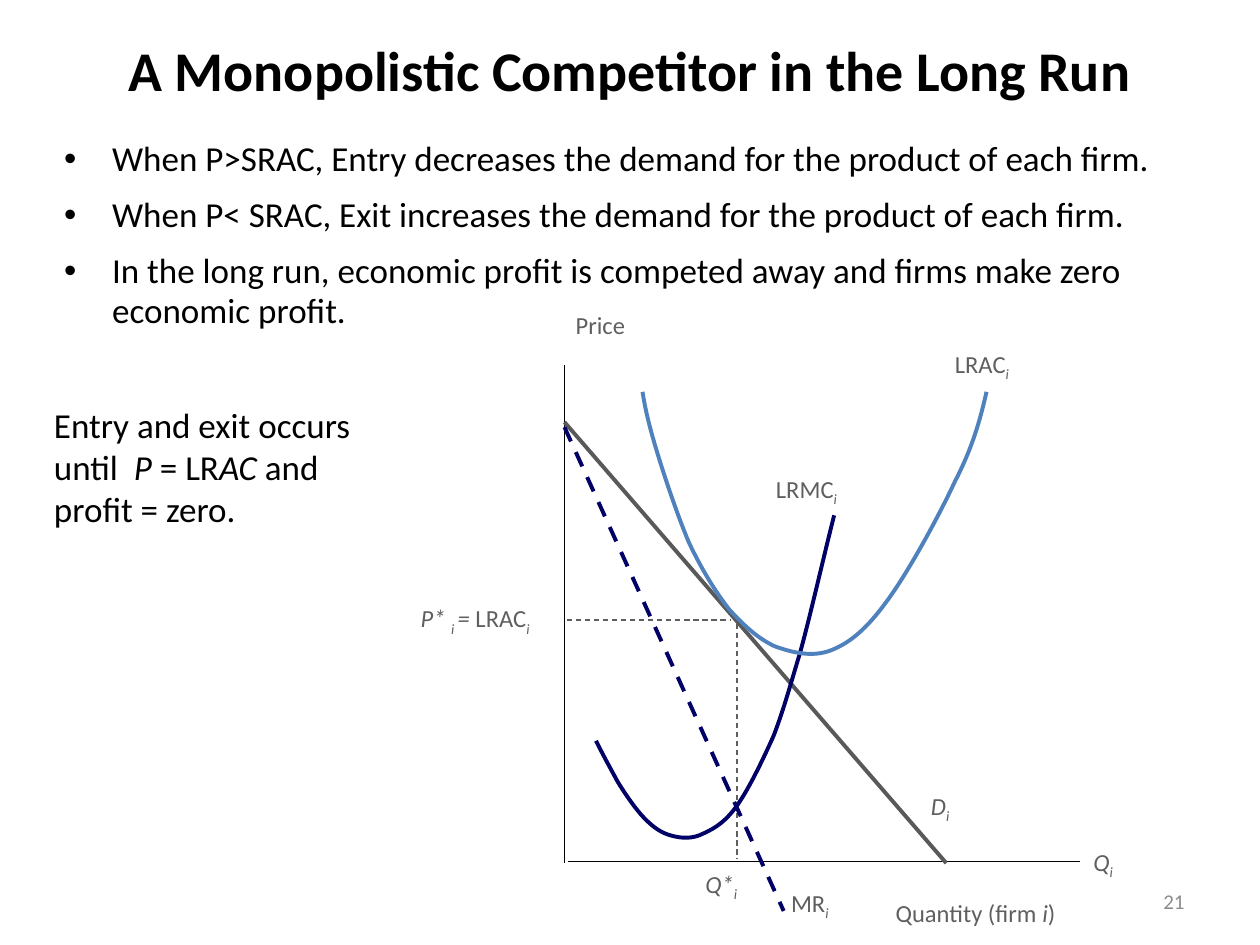
from lxml import etree
from pptx import Presentation
from pptx.dml.color import RGBColor
from pptx.enum.dml import MSO_LINE
from pptx.enum.shapes import MSO_CONNECTOR
from pptx.enum.text import MSO_ANCHOR, MSO_AUTO_SIZE, PP_ALIGN
from pptx.oxml.ns import qn
from pptx.util import Pt

STRAIGHT = MSO_CONNECTOR.STRAIGHT
DASH = MSO_LINE.DASH
LEFT, CENTER, RIGHT = PP_ALIGN.LEFT, PP_ALIGN.CENTER, PP_ALIGN.RIGHT
TOP, MIDDLE = MSO_ANCHOR.TOP, MSO_ANCHOR.MIDDLE
NO_FIT = MSO_AUTO_SIZE.NONE

EMU_PER_PX = 9144  # 100 px to the inch
FONT = "Calibri"
COLORS = {
    "text": "000000",
    "label": "5F5F5F",
    "number": "8C8C8C",
    "axis": "000000",
    "demand": "595959",
    "marginal": "000066",
    "average": "4F81BD",
}
THIN, THICK = 0.75, 2.25
SUB = ("i", "is")  # italic subscript i


def px(value):
    return value * EMU_PER_PX


def color(name):
    return RGBColor.from_string(COLORS[name])


class SlideWriter:
    def __init__(self, page):
        self.page = page

    def place(self, shape, left, top, width, height):
        shape.left, shape.top = px(left), px(top)
        shape.width, shape.height = px(width), px(height)

    def font(self, paragraph, size, tint, bold=None):
        paragraph.font.name = FONT
        paragraph.font.size = Pt(size)
        paragraph.font.bold = bold
        paragraph.font.color.rgb = color(tint)

    def stroke(self, shape, tint, width, dash):
        shape.line.color.rgb = color(tint)
        shape.line.width = Pt(width)
        if dash:
            shape.line.dash_style = dash

    def title(self, text, *area):
        box = self.page.shapes.title
        self.place(box, *area)
        box.text_frame.text = text
        box.text_frame.vertical_anchor = MIDDLE
        para = box.text_frame.paragraphs[0]
        para.alignment = CENTER
        self.font(para, 32, "text", bold=True)

    def bullets(self, items, *area):
        box = self.page.placeholders[1]
        self.place(box, *area)
        frame = box.text_frame
        frame.auto_size = NO_FIT
        frame.text = "\n".join(items)
        for para in frame.paragraphs:
            self.font(para, 20, "text")
            para.line_spacing = 0.95
            para.space_before, para.space_after = Pt(3), Pt(6)
            properties = para._p.get_or_add_pPr()
            properties.set("marL", str(px(38)))
            properties.set("indent", str(px(-38)))

    def text(self, lines, *area, size=14, tint="label", align=LEFT, anchor=TOP):
        """Each line is a list of (text, style): i is italic, s is subscript."""
        box = self.page.shapes.add_textbox(*map(px, area))
        frame = box.text_frame
        frame.word_wrap = True
        frame.vertical_anchor = anchor
        para = frame.paragraphs[0]
        para.alignment = align
        self.font(para, size, tint)
        for number, spans in enumerate(lines):
            if number:
                para.add_line_break()
            for words, style in spans:
                span = para.add_run()
                span.text = words
                if "i" in style:
                    span.font.italic = True
                if "s" in style:
                    span._r.get_or_add_rPr().set("baseline", "-25000")

    def line(self, start, end, tint, width=THIN, dash=None):
        line = self.page.shapes.add_connector(STRAIGHT, *map(px, start + end))
        self.stroke(line, tint, width, dash)
        etree.SubElement(line._element.spPr, qn("a:effectLst"))

    def curve(self, points, tint, width=THICK):
        """Start point, then three points for each Bezier segment."""
        start, *rest = [(px(x), px(y)) for x, y in points]
        builder = self.page.shapes.build_freeform(*start)
        builder.add_line_segments(rest, close=False)
        curve = builder.convert_to_shape()
        curve.shadow.inherit = False
        curve.fill.background()
        self.stroke(curve, tint, width, None)
        outline = next(curve._element.iter(qn("a:path")))
        steps = outline.findall(qn("a:lnTo"))
        for first in range(0, len(steps), 3):
            bezier = etree.SubElement(outline, qn("a:cubicBezTo"))
            for step in steps[first:first + 3]:
                bezier.append(step[0])
                outline.remove(step)


def main():
    deck = Presentation()
    deck.slide_width, deck.slide_height = px(1000), px(750)
    page = deck.slides.add_slide(deck.slide_layouts[1])
    writer = SlideWriter(page)

    # Heading and explanation
    writer.title("A Monopolistic Competitor in the Long Run", 50, 2, 900, 106)
    writer.bullets([
        "When P>SRAC, Entry decreases the demand for the product of each firm.",
        "When P< SRAC, Exit increases the demand for the product of each firm.",
        "In the long run, economic profit is competed away and firms make zero "
        "economic profit.",
    ], 41, 106, 917, 163)
    writer.text([
        [("Entry and exit occurs until  ", ""), ("P", "i"), (" = LR", ""),
         ("AC", "i"), (" and ", "")],
        [("profit = zero.", "")],
    ], 33, 315, 299, 164, size=20, tint="text")

    # Axes and guides to the equilibrium
    writer.line((448, 290), (448, 685), "axis")
    writer.line((451, 684), (857, 684), "axis")
    writer.line((450, 492), (580, 492), "label", dash=DASH)
    writer.line((585, 495), (585, 682), "label", dash=DASH)

    # Demand and marginal revenue
    writer.line((448, 335), (751, 685), "demand", THICK)
    writer.line((448, 339), (622, 723), "marginal", THICK, DASH)

    # Long-run marginal cost
    writer.curve([
        (473, 588), (478, 598), (484, 609), (490, 620),
        (496, 630), (505, 643), (512, 650), (519, 657), (525, 661), (532, 663),
        (539, 665), (547, 666), (555, 663), (564, 659), (573, 655), (583, 642),
        (593, 629), (605, 604), (614, 584), (622, 563), (626, 548), (635, 518),
        (643, 489), (652, 449), (662, 409),
    ], "marginal")

    # Long-run average cost
    writer.curve([
        (510, 311), (512, 324), (515, 337), (521, 357),
        (527, 377), (538, 410), (547, 431), (557, 452), (568, 470), (579, 484),
        (591, 497), (602, 507), (615, 513), (629, 518), (645, 522), (660, 516),
        (675, 510), (688, 499), (704, 477), (721, 454), (745, 410), (758, 382),
        (772, 355), (778, 333), (783, 311),
    ], "average")

    # Labels: spans, left, top, width
    labels = [
        ([("Price", "")], 447, 241, 81),
        ([("P* ", "i"), ("i ", "is"), ("= ", "i"), ("LRAC", ""), SUB],
         324, 474, 111),
        ([("Q*", "i"), SUB], 550, 685, 53),
        ([("MR", ""), SUB], 618, 700, 76),
        ([("Quantity (firm ", ""), ("i", "i"), (")", "")], 701, 708, 169),
        ([("Q", "i"), SUB], 858, 667, 54),
        ([("LRMC", ""), SUB], 606, 371, 79),
        ([("LRAC", ""), SUB], 748, 272, 79),
        ([("D", "i"), SUB], 729, 623, 54),
    ]
    for spans, left, top, width in labels:
        writer.text([spans], left, top, width, 33)

    # Page number
    writer.text([[("21", "")]], 717, 695, 233, 40,
                size=12, tint="number", align=RIGHT, anchor=MIDDLE)

    deck.save("out.pptx")


if __name__ == "__main__":
    main()
